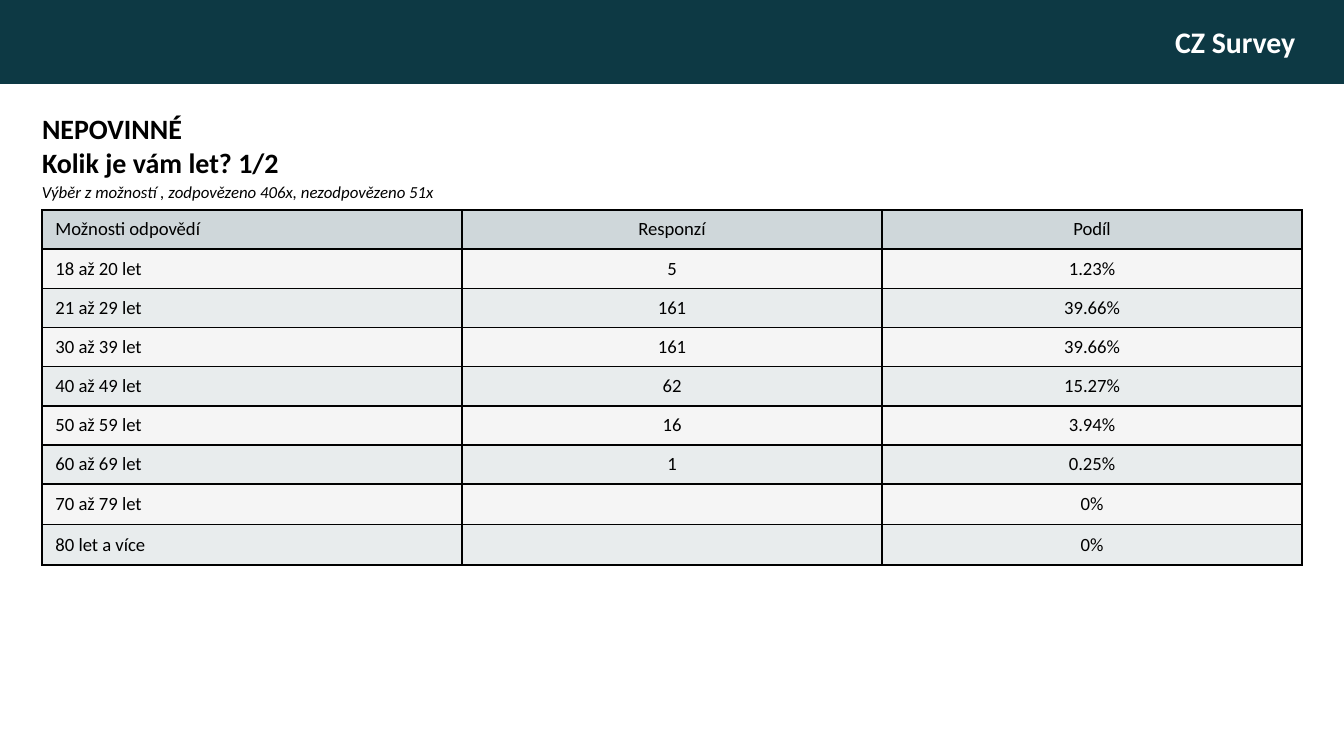
"""Build the survey slide on respondents' age."""
from lxml.etree import SubElement
from pptx import Presentation
from pptx.dml.color import RGBColor
from pptx.enum.shapes import MSO_SHAPE
from pptx.enum.text import MSO_ANCHOR, PP_ALIGN
from pptx.oxml.ns import qn
from pptx.util import Pt

BRAND = "CZ Survey"
TITLE = "NEPOVINNÉ\vKolik je vám let? 1/2"
NOTE = "Výběr z možností , zodpovězeno 406x, nezodpovězeno 51x"
ROWS = [
    ("Možnosti odpovědí", "Responzí", "Podíl"),
    ("18 až 20 let", "5", "1.23%"),
    ("21 až 29 let", "161", "39.66%"),
    ("30 až 39 let", "161", "39.66%"),
    ("40 až 49 let", "62", "15.27%"),
    ("50 až 59 let", "16", "3.94%"),
    ("60 až 69 let", "1", "0.25%"),
    ("70 až 79 let", "", "0%"),
    ("80 let a více", "", "0%"),
]

TEAL = RGBColor(0x0D, 0x39, 0x44)
WHITE = RGBColor(0xFF, 0xFF, 0xFF)
BLACK = RGBColor(0, 0, 0)
HEAD = RGBColor(0xCF, 0xD7, 0xDA)
BANDS = [RGBColor(0xF5, 0xF5, 0xF5), RGBColor(0xE8, 0xEC, 0xED)]

WIDTH = 720
EDGE = 22.5
TALL, TALLER = 21, 21.7


def style(para, size, color=BLACK, bold=False, italic=False, align=PP_ALIGN.LEFT):
    para.alignment = align
    font = para.font
    font.name = "Calibri"
    font.size = Pt(size)
    font.color.rgb = color
    font.bold = bold
    font.italic = italic


def write(shape, text, anchor, size, **look):
    frame = shape.text_frame
    frame.word_wrap = True
    frame.vertical_anchor = anchor
    frame.text = text
    style(frame.paragraphs[0], size, **look)


def border(cell):
    props = cell._tc.get_or_add_tcPr()
    for side in ("lnL", "lnR", "lnT", "lnB"):
        line = SubElement(props, qn("a:" + side), w=str(Pt(1)))
        fill = SubElement(line, qn("a:solidFill"))
        SubElement(fill, qn("a:srgbClr"), val=str(BLACK))


def add_banner(slide):
    bar = slide.shapes.add_shape(MSO_SHAPE.RECTANGLE, 0, 0, Pt(WIDTH), Pt(45))
    bar.shadow.inherit = False
    bar.fill.solid()
    bar.fill.fore_color.rgb = TEAL
    bar.line.fill.background()
    bar.text_frame.margin_right = Pt(26)
    write(bar, BRAND, MSO_ANCHOR.MIDDLE, 16, color=WHITE, bold=True, align=PP_ALIGN.RIGHT)


def add_grid(slide):
    count, wide = len(ROWS[0]), WIDTH - 2 * EDGE
    frame = slide.shapes.add_table(
        len(ROWS), count, Pt(EDGE), Pt(112.5), Pt(wide), Pt(TALL * len(ROWS)))
    table = frame.table
    for col in table.columns:
        col.width = Pt(wide / count)
    for r, row in enumerate(ROWS):
        table.rows[r].height = Pt(TALL if all(row) else TALLER)
        if r == len(ROWS) - 1:
            table.rows[r].height = Pt(TALLER)
        for c, text in enumerate(row):
            cell = table.cell(r, c)
            cell.margin_left = Pt(0 if c else 7.2)
            cell.margin_right = cell.margin_top = cell.margin_bottom = 0
            cell.vertical_anchor = MSO_ANCHOR.MIDDLE
            border(cell)
            cell.fill.solid()
            cell.fill.fore_color.rgb = BANDS[(r - 1) % 2] if r else HEAD
            cell.text = text
            style(cell.text_frame.paragraphs[0], 10,
                  align=PP_ALIGN.CENTER if c else PP_ALIGN.LEFT)


def main():
    deck = Presentation()
    deck.slide_width, deck.slide_height = Pt(WIDTH), Pt(405)
    slide = deck.slides.add_slide(deck.slide_layouts[5])
    add_banner(slide)
    note = slide.shapes.add_textbox(Pt(15.3), Pt(93.6), Pt(300), Pt(45))
    write(note, NOTE, MSO_ANCHOR.TOP, 9, italic=True)
    add_grid(slide)
    title = slide.shapes.title
    title.left, title.top, title.width, title.height = Pt(15.3), Pt(56.2), Pt(690), Pt(37.5)
    write(title, TITLE, MSO_ANCHOR.TOP, 15, bold=True)
    deck.save("out.pptx")


if __name__ == "__main__":
    main()
